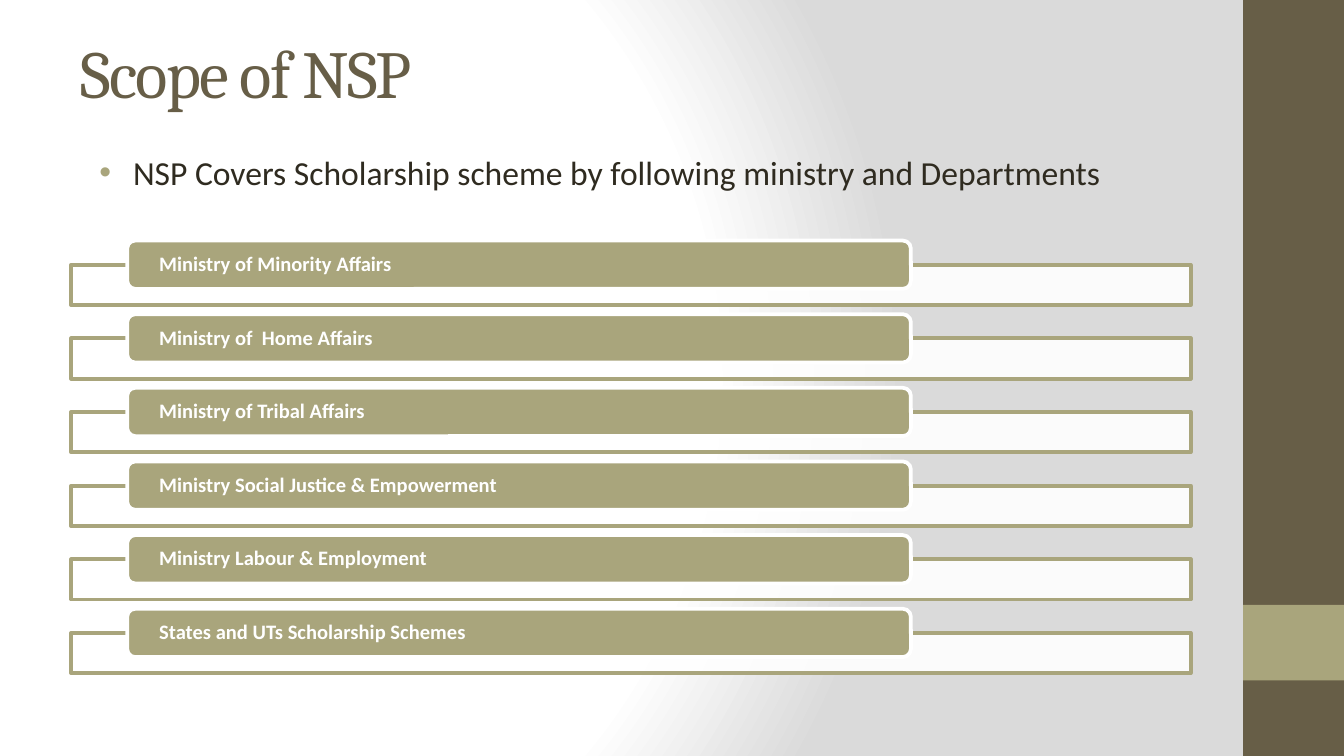
from pptx import Presentation
from pptx.dml.color import RGBColor
from pptx.enum.shapes import MSO_SHAPE
from pptx.enum.text import MSO_ANCHOR, MSO_AUTO_SIZE, PP_ALIGN
from pptx.oxml import parse_xml
from pptx.oxml.ns import nsdecls
from pptx.util import Inches, Pt

RECT, ROUND = MSO_SHAPE.RECTANGLE, MSO_SHAPE.ROUNDED_RECTANGLE
MIDDLE, TOP, LEFT = MSO_ANCHOR.MIDDLE, MSO_ANCHOR.TOP, PP_ALIGN.LEFT
COLORS = {"brown": "675E47", "olive": "A9A57C", "text": "2F2B20",
          "white": "FFFFFF", "gray": "DADADA"}
W, H = 10, 10 * 9 / 16
MARGIN, ROW_W = 0.53, 8.33                      # left edge and width of the rows
ROW_TOP, LAST_TOP = 1.97, 4.71                  # tops of first and last row


def add_box(kind, x, y, w, h, fill, line=None):
    sp = s.shapes.add_shape(kind, Inches(x), Inches(y), Inches(w), Inches(h))
    sp.shadow.inherit = False
    sp.fill.solid()
    sp.fill.fore_color.rgb = RGBColor.from_string(COLORS[fill])
    if line:
        sp.line.color.rgb = RGBColor.from_string(COLORS[line])
        sp.line.width = Pt(2)
    else:
        sp.line.fill.background()
    return sp


def write(sp, text, size, font, color, anchor, bold=False):
    tf = sp.text_frame
    tf.text = text
    tf.word_wrap = True
    tf.auto_size = MSO_AUTO_SIZE.NONE
    tf.vertical_anchor = anchor
    p = tf.paragraphs[0]
    p.alignment = LEFT
    r = p.runs[0]
    r.font.size, r.font.name, r.font.bold = Pt(size), font, bold
    r.font.color.rgb = RGBColor.from_string(COLORS[color])
    return p


prs = Presentation()
prs.slide_width, prs.slide_height = Inches(W), Inches(H)
s = prs.slides.add_slide(prs.slide_layouts[1])

# Background: circular gradient, white to gray
s.background.fill.solid()
bg = s.background._cSld.bg.bgPr
stops = "".join(
    f'<a:gs pos="{pos * 1000}"><a:srgbClr val="{COLORS[name]}"/></a:gs>'
    for pos, name in ((0, "white"), (75, "white"), (100, "gray")))
bg.replace(bg[0], parse_xml(
    f'<a:gradFill {nsdecls("a")} rotWithShape="1"><a:gsLst>{stops}</a:gsLst>'
    '<a:path path="circle"><a:fillToRect l="20000" t="50000" r="100000" b="50000"/>'
    '</a:path></a:gradFill>'))

# Side band with accent block
add_box(RECT, 0.925 * W, 0, 0.075 * W, H, "brown")
add_box(RECT, 0.925 * W, 0.8 * H, 0.075 * W, 0.1 * H, "olive")

# Title
title, body = s.placeholders
title.left, title.top = Inches(0.5), Inches(0.06)
title.width, title.height = Inches(ROW_W), Inches(0.94)
p = write(title, "Scope of NSP", 36, "Cambria", "brown", MIDDLE)
p.runs[0].font._element.set("spc", "-100")

# Introductory bullet
body.left, body.top = Inches(0.51), Inches(1.08)
body.width, body.height = Inches(ROW_W), Inches(0.79)
p = write(body, "NSP Covers Scholarship scheme by following ministry and Departments",
          18, "Calibri", "text", TOP)
pPr = p._p.get_or_add_pPr()
pPr.set("marL", str(Inches(0.38)))
pPr.set("indent", str(Inches(-0.25)))
pPr.append(parse_xml(f'<a:buClr {nsdecls("a")}><a:srgbClr val="{COLORS["olive"]}"/></a:buClr>'))
pPr.append(parse_xml(f'<a:buFont {nsdecls("a")} typeface="Arial"/>'))
pPr.append(parse_xml(f'<a:buChar {nsdecls("a")} char="•"/>'))

# Ministry rows: outlined bar with a rounded label over its top edge
ministries = ["Ministry of Minority Affairs", "Ministry of  Home Affairs",
              "Ministry of Tribal Affairs", "Ministry Social Justice & Empowerment",
              "Ministry Labour & Employment", "States and UTs Scholarship Schemes"]
pitch = (LAST_TOP - ROW_TOP) / (len(ministries) - 1)
for i, name in enumerate(ministries):
    y = ROW_TOP + i * pitch
    bar = add_box(RECT, MARGIN, y, ROW_W, 0.3, "white", "olive")
    bar.fill._xPr.solidFill[0].append(
        parse_xml(f'<a:alpha {nsdecls("a")} val="90000"/>'))
    label = add_box(ROUND, MARGIN + 0.05 * ROW_W, y - 0.18, 0.7 * ROW_W, 0.36,
                    "olive", "white")
    p = write(label, name, 11, "Calibri", "white", MIDDLE, bold=True)
    p.line_spacing = 0.9
    tf = label.text_frame
    tf.margin_left = tf.margin_right = Inches(0.22)
    tf.margin_top = tf.margin_bottom = 0

prs.save("out.pptx")
